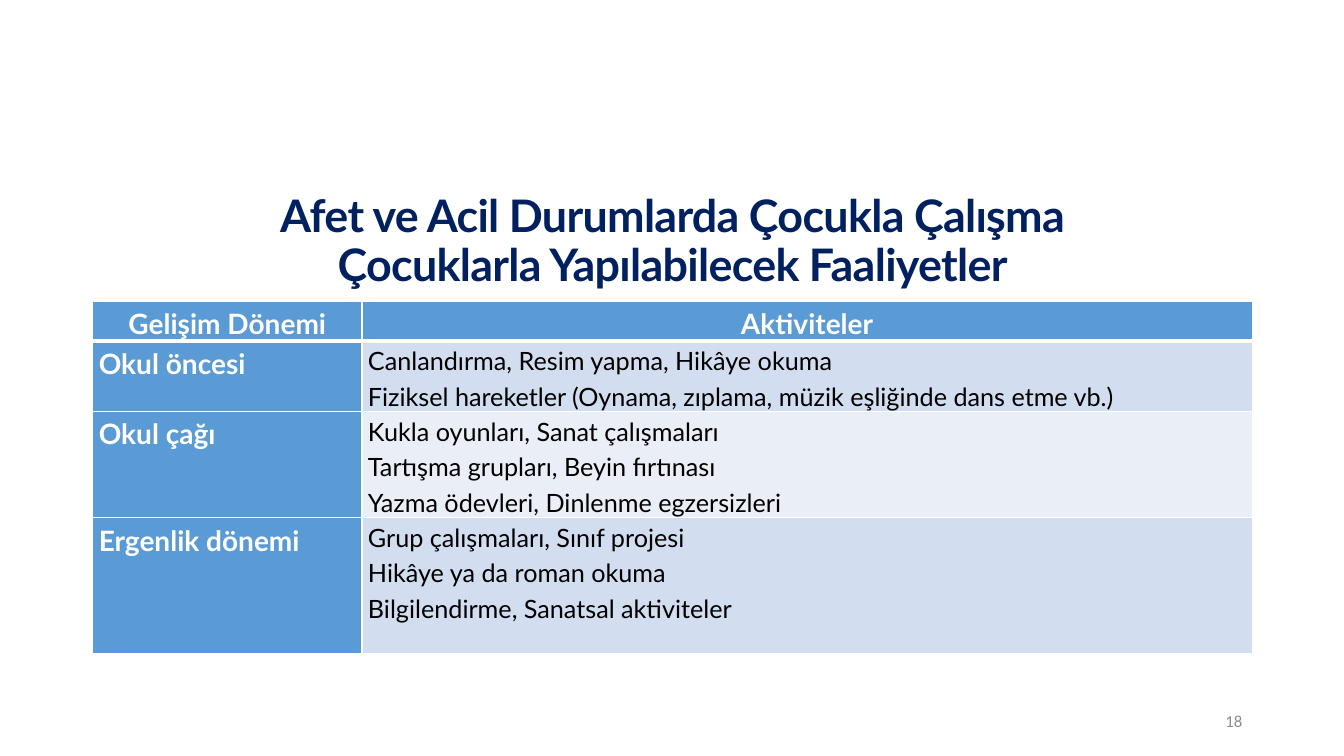
from lxml import etree
from pptx import Presentation
from pptx.dml.color import RGBColor
from pptx.enum.text import MSO_ANCHOR, PP_ALIGN
from pptx.oxml.ns import qn
from pptx.util import Inches, Pt

LEFT, MID, RIGHT, JUST = PP_ALIGN.LEFT, PP_ALIGN.CENTER, PP_ALIGN.RIGHT, PP_ALIGN.JUSTIFY
CENTRE = MSO_ANCHOR.MIDDLE

TITLE = "Afet ve Acil Durumlarda Çocukla Çalışma\vÇocuklarla Yapılabilecek Faaliyetler"
HEAD = ("Gelişim Dönemi", "Aktiviteler")
STAGES = [
    ("Okul öncesi", [
        "Canlandırma, Resim yapma, Hikâye okuma",
        "Fiziksel hareketler (Oynama, zıplama, müzik eşliğinde dans etme vb.)",
    ]),
    ("Okul çağı", [
        "Kukla oyunları, Sanat çalışmaları",
        "Tartışma grupları, Beyin fırtınası",
        "Yazma ödevleri, Dinlenme egzersizleri",
    ]),
    ("Ergenlik dönemi", [
        "Grup çalışmaları, Sınıf projesi",
        "Hikâye ya da roman okuma",
        "Bilgilendirme, Sanatsal aktiviteler",
    ]),
]
PAGE = "18"

INK = {"navy": "002060", "blue": "5B9BD5", "pale": "D2DEEF", "light": "EAEFF7",
       "white": "FFFFFF", "black": "000000", "grey": "8C8C8C"}
BANDS = ("pale", "light")
WIDE, HIGH = 13.33, 7.5
EDGE = 0.92
SPAN = 11.5
COLS = (2.67, SPAN - 2.67)
ROWS = (0.36, 0.66, 1, 1.35)
TOP = 2.99


def style(par, size, ink, align, bold=False, face="Lato", lead=None):
    par.alignment = align
    if lead:
        par.line_spacing = lead
    font = par.font
    font.name, font.size, font.bold = face, Pt(size), bold
    font.color.rgb = RGBColor.from_string(INK[ink])


def label(slide, text, box, *look, **more):
    frame = slide.shapes.add_textbox(*map(Inches, box)).text_frame
    frame.word_wrap = True
    frame.vertical_anchor = CENTRE
    par = frame.paragraphs[0]
    par.text = text
    style(par, *look, **more)
    return par


def border(cell, row):
    props = cell._tc.get_or_add_tcPr()
    thick = {"lnT": row == 1, "lnB": row == 0}
    for side in ("lnL", "lnR", "lnT", "lnB"):
        width = Pt(3 if thick.get(side) else 1)
        line = etree.SubElement(props, qn("a:" + side), w=str(width))
        fill = etree.SubElement(line, qn("a:solidFill"))
        etree.SubElement(fill, qn("a:srgbClr"), val=INK["white"])


def fill_cell(cell, row, lines, ground, *look):
    border(cell, row)
    cell.fill.solid()
    cell.fill.fore_color.rgb = RGBColor.from_string(INK[ground])
    cell.margin_left = cell.margin_right = Inches(0.06)
    cell.margin_top = cell.margin_bottom = 0
    cell.text = "\n".join(lines)
    for par in cell.text_frame.paragraphs:
        style(par, *look, lead=1.17)


def add_grid(slide):
    shape = slide.shapes.add_table(len(ROWS), len(COLS), Inches(EDGE), Inches(TOP),
                                   Inches(SPAN), Inches(sum(ROWS)))
    table = shape.table
    table.horz_banding = False
    for col, width in zip(table.columns, COLS):
        col.width = Inches(width)
    for row, height in zip(table.rows, ROWS):
        row.height = Inches(height)
    for col, text in enumerate(HEAD):
        fill_cell(table.cell(0, col), 0, [text], "blue", 20, "white", MID, True)
    for row, (stage, acts) in enumerate(STAGES, 1):
        band = BANDS[(row - 1) % len(BANDS)]
        fill_cell(table.cell(row, 0), row, [stage], "blue", 20, "white", LEFT, True)
        fill_cell(table.cell(row, 1), row, acts, band, 18, "black", JUST)


def main():
    deck = Presentation()
    deck.slide_width, deck.slide_height = Inches(WIDE), Inches(HIGH)
    slide = deck.slides.add_slide(deck.slide_layouts[6])
    title = label(slide, TITLE, (EDGE, 1.68, SPAN, 1.45), 32, "navy", MID, True, lead=0.9)
    for run in title.runs:
        run._r.get_or_add_rPr().set("spc", "-50")
    add_grid(slide)
    label(slide, PAGE, (EDGE + SPAN - 3, 6.95, 3, 0.4), 12, "grey", RIGHT, face="Calibri")
    deck.save("out.pptx")


if __name__ == "__main__":
    main()
